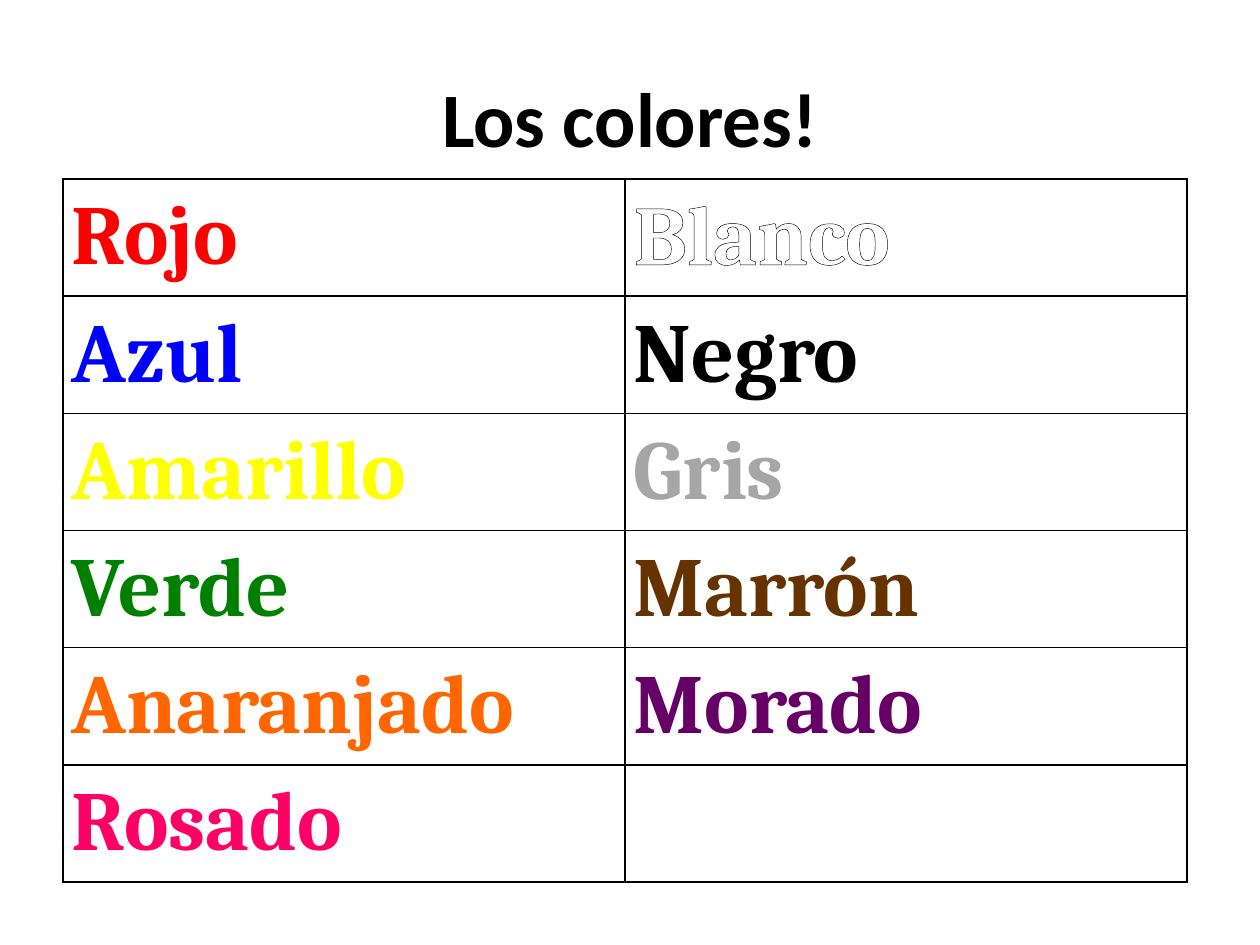
"""Build a slide that lists the Spanish colour names in a two-column table."""

import dataclasses
import typing

import lxml.etree
import pptx
import pptx.dml.color
import pptx.enum.text
import pptx.oxml.ns
import pptx.util

Inches = pptx.util.Inches


@dataclasses.dataclass(frozen=True)
class Theme:
    title_font: str = "Calibri"
    title_size: float = 44
    word_font: str = "Cambria"
    word_size: float = 48
    ink: str = "000000"
    border_width: float = 1


@dataclasses.dataclass(frozen=True)
class ColorWord:
    text: str
    color: str
    outline_width: float = 0


THEME = Theme()
COLUMN_WIDTH = 4.46
ROW_HEIGHT = 0.93
COLOR_COLUMNS = (
    (
        ColorWord("Rojo", "FF0000"),
        ColorWord("Azul", "0000FF"),
        ColorWord("Amarillo", "FFFF00", 0.75),
        ColorWord("Verde", "008000"),
        ColorWord("Anaranjado", "FF6600"),
        ColorWord("Rosado", "FF0066"),
    ),
    (
        ColorWord("Blanco", "FFFFFF", 1.75),
        ColorWord("Negro", "000000"),
        ColorWord("Gris", "A6A6A6", 0.75),
        ColorWord("Marrón", "663300"),
        ColorWord("Morado", "660066"),
    ),
)


def make_line(tag: str, width: float, color: str) -> typing.Any:
    qualified = pptx.oxml.ns.qn
    line = lxml.etree.Element(qualified(tag), w=str(int(pptx.util.Pt(width))))
    fill = lxml.etree.SubElement(line, qualified("a:solidFill"))
    lxml.etree.SubElement(fill, qualified("a:srgbClr"), val=color)
    return line


def write_text(
    text_frame: typing.Any,
    text: str,
    *,
    font: str,
    size: float,
    color: str,
    alignment: typing.Any = pptx.enum.text.PP_ALIGN.LEFT,
    outline_width: float = 0,
) -> None:
    paragraph = text_frame.paragraphs[0]
    paragraph.alignment = alignment
    run = paragraph.add_run()
    run.text = text
    run.font.name = font
    run.font.size = pptx.util.Pt(size)
    run.font.bold = True
    run.font.color.rgb = pptx.dml.color.RGBColor.from_string(color)
    if outline_width:
        run.font._element.insert(0, make_line("a:ln", outline_width, THEME.ink))


def format_cell(cell: typing.Any) -> None:
    cell.vertical_anchor = pptx.enum.text.MSO_ANCHOR.MIDDLE
    cell.margin_left = cell.margin_right = Inches(0.07)
    cell.margin_top = cell.margin_bottom = 0
    cell.fill.background()
    properties = cell._tc.get_or_add_tcPr()
    for position, side in enumerate(("L", "R", "T", "B")):
        border = make_line(f"a:ln{side}", THEME.border_width, THEME.ink)
        properties.insert(position, border)


def add_title(slide: typing.Any, text: str) -> None:
    title = slide.shapes.title
    title.left, title.top = Inches(0.5), Inches(0.3)
    title.width, title.height = Inches(9), Inches(1.25)
    title.text_frame.vertical_anchor = pptx.enum.text.MSO_ANCHOR.MIDDLE
    write_text(
        title.text_frame,
        text,
        font=THEME.title_font,
        size=THEME.title_size,
        color=THEME.ink,
        alignment=pptx.enum.text.PP_ALIGN.CENTER,
    )


def add_color_table(
    slide: typing.Any, columns: tuple[tuple[ColorWord, ...], ...]
) -> None:
    row_count = max(len(words) for words in columns)
    table = slide.shapes.add_table(
        row_count,
        len(columns),
        Inches(0.5),
        Inches(1.42),
        Inches(COLUMN_WIDTH * len(columns)),
        Inches(ROW_HEIGHT * row_count),
    ).table
    table.first_row = table.horz_banding = False
    for cell in table.iter_cells():
        format_cell(cell)
    for column_index, words in enumerate(columns):
        for row_index, word in enumerate(words):
            write_text(
                table.cell(row_index, column_index).text_frame,
                word.text,
                font=THEME.word_font,
                size=THEME.word_size,
                color=word.color,
                outline_width=word.outline_width,
            )


def main() -> None:
    presentation = pptx.Presentation()
    presentation.slide_width = Inches(10)
    presentation.slide_height = Inches(7.5)
    slide = presentation.slides.add_slide(presentation.slide_layouts[5])
    add_title(slide, "Los colores!")
    add_color_table(slide, COLOR_COLUMNS)
    presentation.save("out.pptx")


if __name__ == "__main__":
    main()
